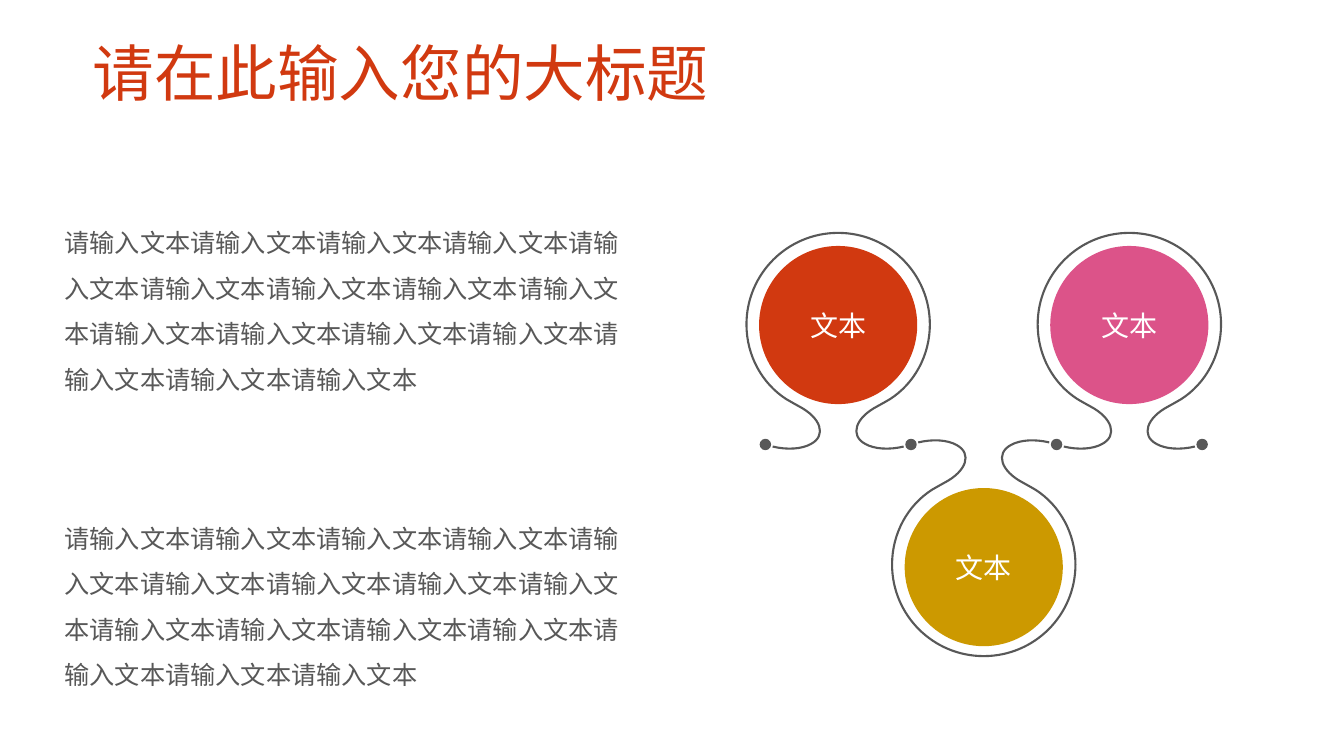
from lxml import etree
from pptx import Presentation
from pptx import util as u
from pptx.dml.color import RGBColor
from pptx.enum import shapes, text
from pptx.oxml import ns

FONT = "Noto Sans CJK SC"
RED, PINK, GOLD, GREY, WHITE = "D13910", "DC5389", "CC9900", "585858", "FFFFFF"
LOOP_HEIGHT, LOOP_STEP = 156, 104
DOT_Y, DOT_SIZE, DISC_SIZE = 151.9, 8.2, 113
START = (0, 0.75)
CURVES = [
    [(36.2, 0.75), (65.5, 30), (65.5, 66.2)],
    [(65.5, 88.6), (54.2, 108.5), (37.1, 119.5)],
    [(34.2, 121.2), (31.2, 122.9), (28.1, 124.6)],
    [(12.3, 132.8), (8, 145.5), (19.5, 151.6)],
    [(26, 155.2), (36.4, 155.9), (46.8, 153.4)],
]


def color(hex_string):
    """Turn a hex string into a colour."""
    return RGBColor.from_string(hex_string)


def write(shape, words, size, fill, anchor, **paragraph_format):
    """Write one formatted paragraph into a shape."""
    frame = shape.text_frame
    frame.word_wrap = True
    frame.vertical_anchor = anchor
    para = frame.paragraphs[0]
    for name, value in paragraph_format.items():
        setattr(para, name, value)
    span = para.add_run()
    span.text = words
    span.font.color.rgb = color(fill)
    for name, value in {"size": u.Pt(size), "name": FONT}.items():
        setattr(span.font, name, value)
    etree.SubElement(span.font._element, ns.qn("a:ea"), typeface=FONT)


def text_block(page, box, words, size, fill, anchor, spacing):
    """Place a text box in the given box."""
    shape = page.shapes.add_textbox(*map(u.Pt, box))
    write(shape, words, size, fill, anchor, line_spacing=spacing)


def circle(page, center, top, size, fill):
    """Draw a flat circle below the given top."""
    box = (center - size / 2, top, size, size)
    shape = page.shapes.add_shape(shapes.MSO_SHAPE.OVAL, *map(u.Pt, box))
    shape.shadow.inherit = False
    shape.fill.solid()
    shape.fill.fore_color.rgb = color(fill)
    shape.line.fill.background()
    return shape


def bend(shape):
    """Turn every three line segments of a freeform into one cubic curve."""
    segments = list(shape._element.iter(ns.qn("a:lnTo")))
    for index in range(0, len(segments), 3):
        first, *others = segments[index:index + 3]
        first.tag = ns.qn("a:cubicBezTo")
        for other in others:
            first.append(other[0])
            other.getparent().remove(other)


def loop(page, center, top, flipped):
    """Draw a loop that opens into two tails."""
    half = [point for curve in CURVES for point in curve]
    outline = [(-x, y) for x, y in reversed(half)] + [START] + half
    points = [(u.Pt(center + x), u.Pt(top + (LOOP_HEIGHT - y if flipped else y)))
              for x, y in outline]
    builder = page.shapes.build_freeform(*points[0])
    builder.add_line_segments(points[1:], close=False)
    shape = builder.convert_to_shape()
    bend(shape)
    shape.shadow.inherit = False
    shape.fill.background()
    shape.line.color.rgb = color(GREY)
    shape.line.width = u.Pt(1.5)


def diagram(page, left, top):
    """Draw the chain of three loops with its dots and labelled discs."""
    centers = [left + 66.5 + LOOP_STEP * index for index in range(3)]
    for index, center in enumerate(centers):
        low = index % 2
        loop(page, center, top + 147.8 * low, low)
    for index in range(4):
        circle(page, left + 14.5 + LOOP_STEP * index, top + DOT_Y - DOT_SIZE / 2,
               DOT_SIZE, GREY)
    for center, offset, fill in zip(centers, (10.1, 183, 10.1), (RED, GOLD, PINK)):
        disc = circle(page, center, top + offset, DISC_SIZE, fill)
        write(disc, "文本", 20, WHITE, text.MSO_ANCHOR.MIDDLE,
              alignment=text.PP_ALIGN.CENTER)


def main():
    """Build the slide and save it."""
    deck = Presentation()
    deck.slide_width, deck.slide_height = u.Pt(960), u.Pt(540)
    page = deck.slides.add_slide(deck.slide_layouts[6])
    text_block(page, (59, 8.6, 841, 73.4), "请在此输入您的大标题", 44, RED,
               text.MSO_ANCHOR.BOTTOM, 0.9)
    diagram(page, 532.2, 165.6)
    for top in (144.7, 355.7):
        text_block(page, (39, top, 414, 144), "请输入文本" * 16, 18, GREY,
                   text.MSO_ANCHOR.MIDDLE, 1.5)
    deck.save("out.pptx")


if __name__ == "__main__":
    main()
